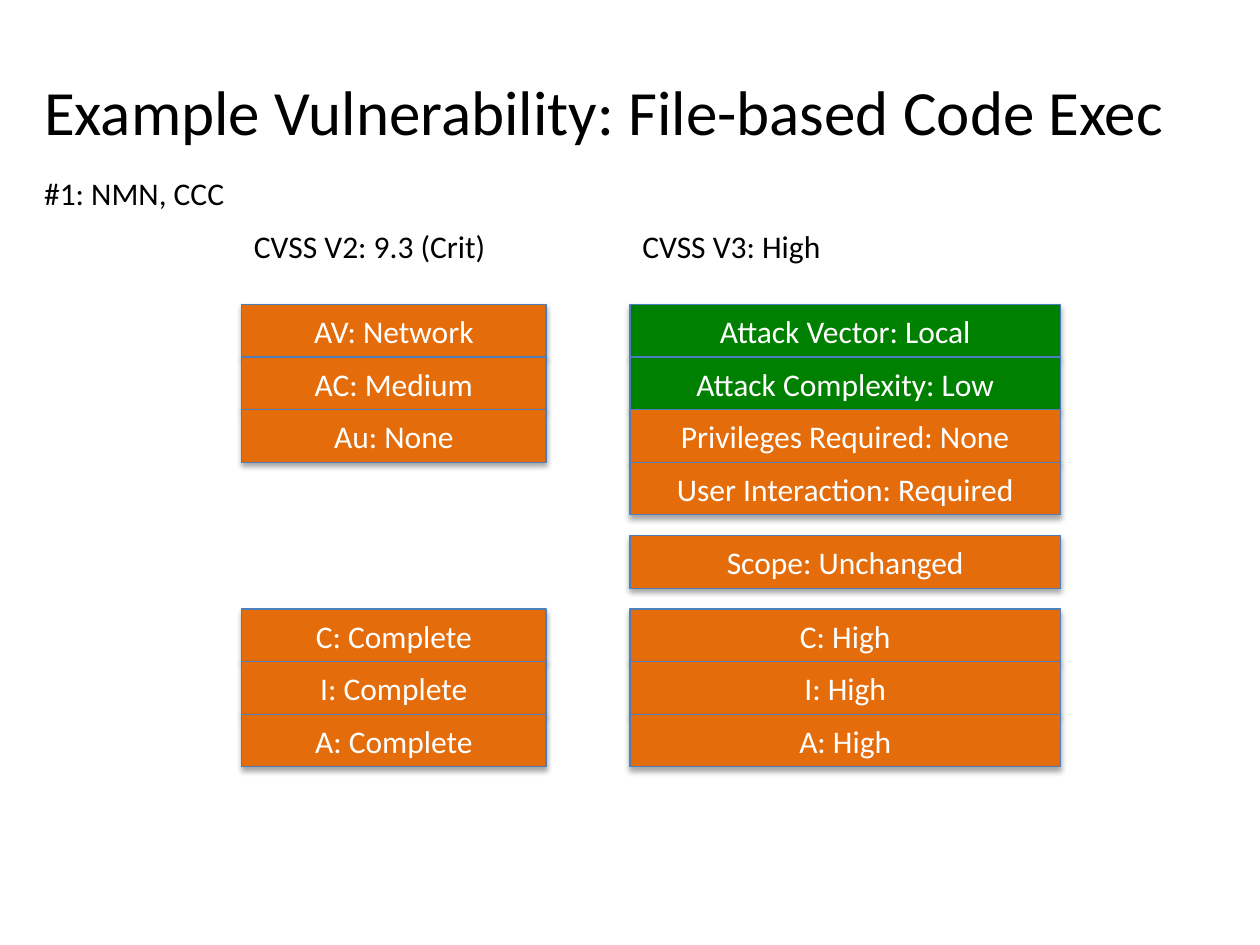
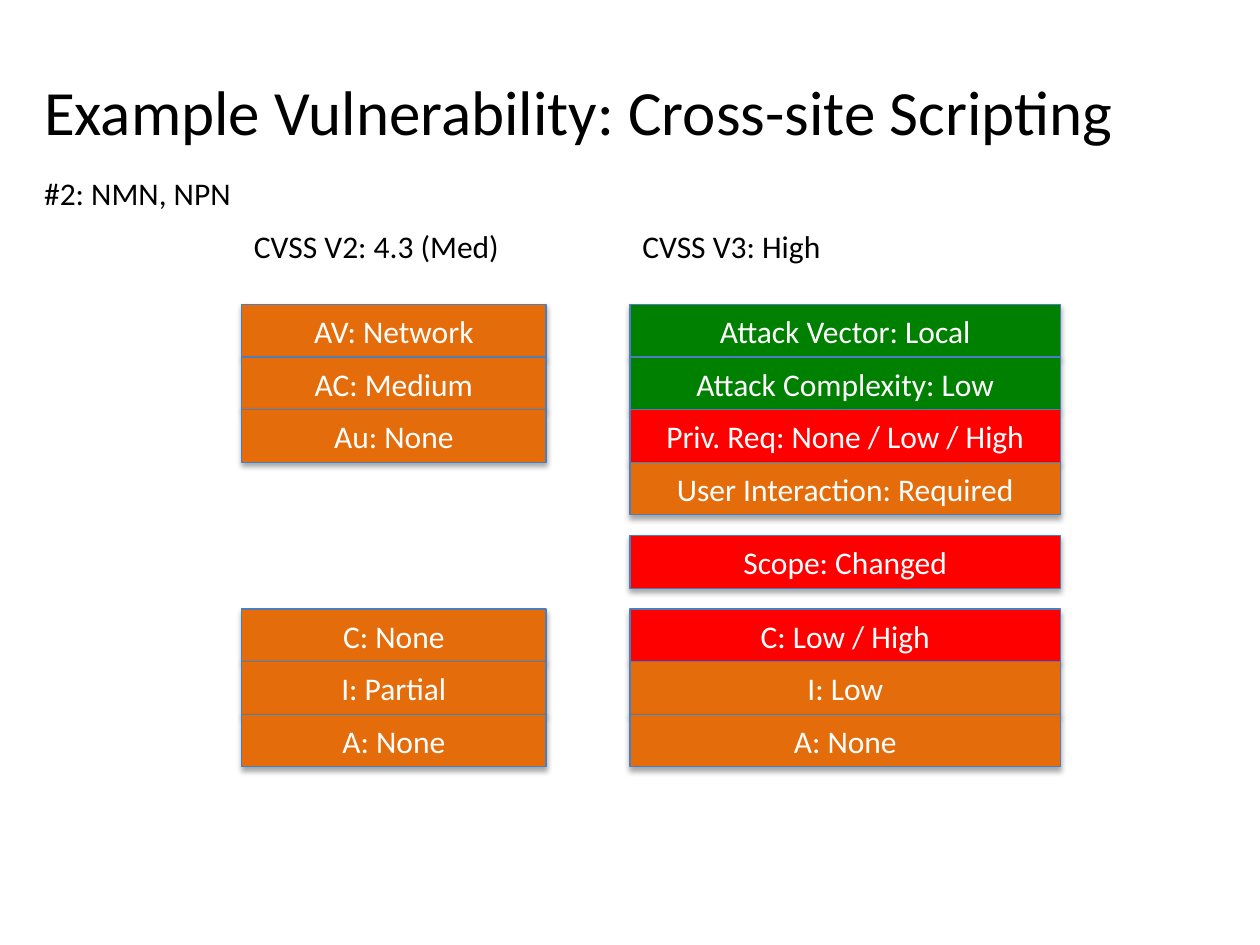
import pptx
import pptx.dml.color
import pptx.enum.shapes
import pptx.enum.text
import pptx.oxml
import pptx.oxml.ns
import pptx.util
from dataclasses import dataclass

Cm = pptx.util.Cm
Pt = pptx.util.Pt
Align = pptx.enum.text.PP_ALIGN
Anchor = pptx.enum.text.MSO_ANCHOR
Fit = pptx.enum.text.MSO_AUTO_SIZE


@dataclass(frozen=True)
class Theme:
    font: str = "Calibri"
    ink: str = "000000"
    light: str = "FFFFFF"
    edge: str = "4B7EBC"
    same: str = "E46C0A"
    down: str = "008000"
    up: str = "FF0000"
    head: int = 36
    body: int = 18


THEME = Theme()

# Grid in centimetres
TOP, ROW, GAP = 6.14, 1.06, 0.42
SLOTS = (4, 1, 3)  # rows kept for each metric group
LABEL_TOP = 4.45
LEFT_V2, WIDE_V2 = 4.87, 6.14
LEFT_V3, WIDE_V3 = 12.7, 8.68

SHADOW = (
    f'<a:outerShdw {pptx.oxml.ns.nsdecls("a")} blurRad="40000" dist="23000" '
    'dir="5400000" rotWithShape="0"><a:srgbClr val="000000">'
    '<a:alpha val="35000"/></a:srgbClr></a:outerShdw>'
)


def rgb(code):
    return pptx.dml.color.RGBColor.from_string(code)


def write(frame, text, size=THEME.body, color=THEME.ink, align=Align.LEFT,
          anchor=Anchor.TOP, wrap=True, fit=Fit.NONE, space=None):
    """Fill a text frame with one formatted paragraph."""
    frame.word_wrap = wrap
    frame.auto_size = fit
    frame.vertical_anchor = anchor
    para = frame.paragraphs[0]
    para.alignment = align
    if space:
        para.line_spacing = space
    run = para.add_run()
    run.text = text
    run.font.name = THEME.font
    run.font.size = Pt(size)
    run.font.color.rgb = rgb(color)


def title(slide, text):
    box = slide.shapes.add_textbox(Cm(0.64), Cm(1.19), Cm(23.85), Cm(2.34))
    write(box.text_frame, text, size=THEME.head, anchor=Anchor.MIDDLE, space=0.8)


def label(slide, text, left, top, width):
    box = slide.shapes.add_textbox(Cm(left), Cm(top), Cm(width), Cm(1.02))
    write(box.text_frame, text, wrap=False, fit=Fit.SHAPE_TO_FIT_TEXT)


def metric(slide, text, fill, left, top, width):
    """Draw one bordered metric bar with a soft shadow."""
    kind = pptx.enum.shapes.MSO_SHAPE.RECTANGLE
    bar = slide.shapes.add_shape(kind, Cm(left), Cm(top), Cm(width), Cm(ROW))
    bar.fill.solid()
    bar.fill.fore_color.rgb = rgb(fill)
    bar.line.color.rgb = rgb(THEME.edge)
    bar.line.width = Pt(0.75)
    bar.shadow.inherit = False
    effects = bar._element.spPr.find(pptx.oxml.ns.qn("a:effectLst"))
    effects.append(pptx.oxml.parse_xml(SHADOW))
    write(bar.text_frame, text, color=THEME.light, align=Align.CENTER,
          anchor=Anchor.MIDDLE)


def column(slide, groups, left, width):
    """Stack metric groups, keeping both versions on the same rows."""
    top = TOP
    for group, slots in zip(groups, SLOTS):
        for row, (text, fill) in enumerate(group):
            metric(slide, text, fill, left, top + row * ROW, width)
        top += slots * ROW + GAP


def same(*names):
    return [(name, THEME.same) for name in names]


def down(*names):
    return [(name, THEME.down) for name in names]


def up(*names):
    return [(name, THEME.up) for name in names]


# Metrics that both examples share
BASE_V2 = same("AV: Network", "AC: Medium", "Au: None")
BASE_V3 = down("Attack Vector: Local", "Attack Complexity: Low")
USER = same("User Interaction: Required")

CASES = [
    dict(
        name="File-based Code Exec",
        tag=("#1: NMN, CCC", 4.19),
        score=("CVSS V2: 9.3 (Crit)", 5.23),
        old=[BASE_V2, [], same("C: Complete", "I: Complete", "A: Complete")],
        new=[BASE_V3 + same("Privileges Required: None") + USER,
             same("Scope: Unchanged"),
             same("C: High", "I: High", "A: High")],
    ),
    dict(
        name="Cross-site Scripting",
        tag=("#2: NMN, NPN", 4.32),
        score=("CVSS V2: 4.3 (Med)", 5.51),
        old=[BASE_V2, [], same("C: None", "I: Partial", "A: None")],
        new=[BASE_V3 + up("Priv. Req: None / Low / High") + USER,
             up("Scope: Changed"),
             up("C: Low / High") + same("I: Low", "A: None")],
    ),
]


def build(deck, case):
    slide = deck.slides.add_slide(deck.slide_layouts[6])
    title(slide, f"Example Vulnerability: {case['name']}")

    # Version 2 scores
    column(slide, case["old"], LEFT_V2, WIDE_V2)
    text, width = case["score"]
    label(slide, text, LEFT_V2, LABEL_TOP, width)

    # Version 3 scores
    column(slide, case["new"], LEFT_V3, WIDE_V3)
    label(slide, "CVSS V3: High", LEFT_V3, LABEL_TOP, 4.14)

    # Example number and vector
    text, width = case["tag"]
    label(slide, text, 0.64, 3.39, width)


def main():
    deck = pptx.Presentation()
    deck.slide_width, deck.slide_height = Cm(25.4), Cm(19.05)
    for case in CASES:
        build(deck, case)
    deck.save("out.pptx")


if __name__ == "__main__":
    main()
